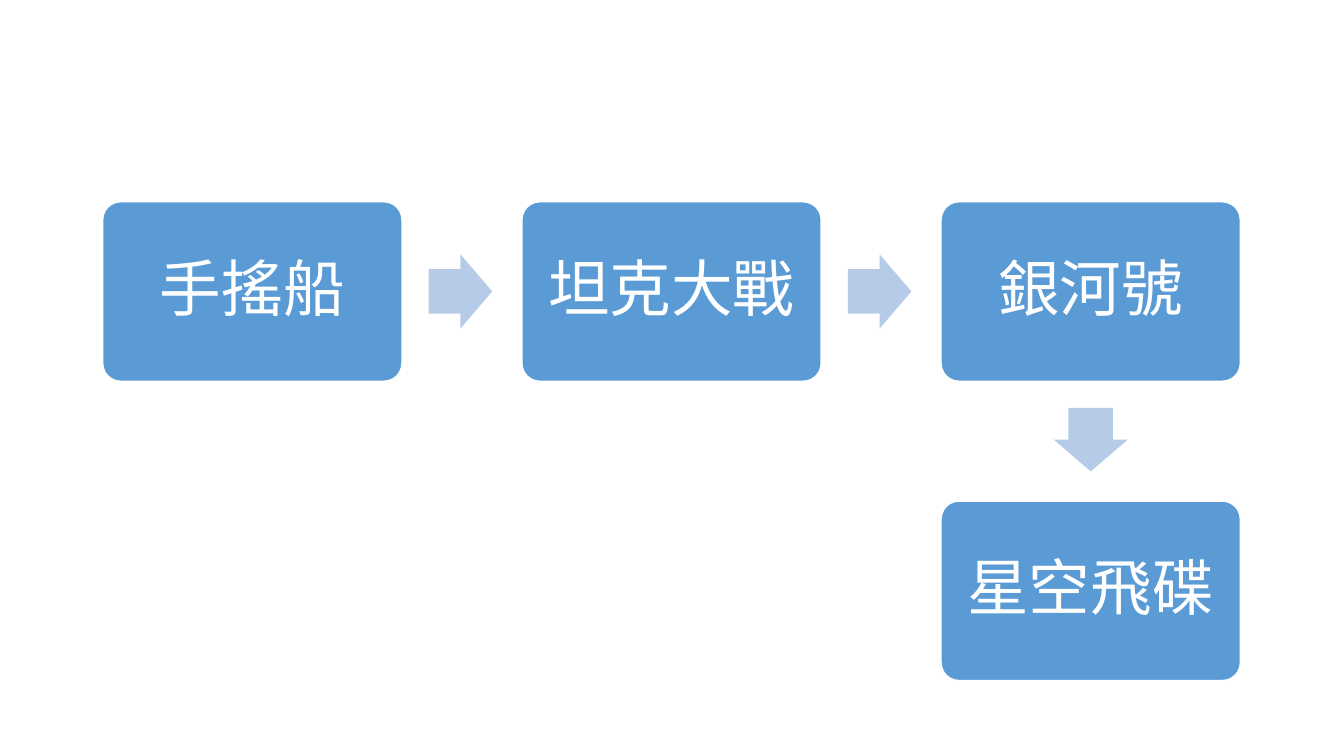
from pptx import Presentation
from pptx.dml.color import RGBColor
from pptx.enum.shapes import MSO_SHAPE
from pptx.enum.text import MSO_ANCHOR, PP_ALIGN
from pptx.util import Pt

ROUNDED, ARROW = MSO_SHAPE.ROUNDED_RECTANGLE, MSO_SHAPE.RIGHT_ARROW
MIDDLE, CENTER = MSO_ANCHOR.MIDDLE, PP_ALIGN.CENTER

COLORS = {"box": "5B9BD5", "arrow": "B5CBE7", "white": "FFFFFF"}
LEFT, TOP = 73.4, 144.1
BOX_W, BOX_H = 213.8, 128.2
STEP_X, STEP_Y = 299.4, 213.8
ARROW_W, ARROW_H = 45.4, 53
ARROW_SHIFT = 1.1
STEPS = [("手搖船", 0, 0), ("坦克大戰", 1, 0), ("銀河號", 2, 0), ("星空飛碟", 2, 1)]


class FlowSlide:
    """Draws the boxes and arrows of a flow on one slide."""

    def __init__(self, slide, font="Calibri", size=44):
        self.slide, self.font, self.size = slide, font, size

    def color(self, name):
        return RGBColor.from_string(COLORS[name])

    def shape(self, kind, x, y, w, h, fill):
        s = self.slide.shapes.add_shape(kind, Pt(x), Pt(y), Pt(w), Pt(h))
        s.shadow.inherit = False
        s.fill.solid()
        s.fill.fore_color.rgb = self.color(fill)
        return s

    def box(self, text, col, row):
        s = self.shape(ROUNDED, LEFT + col * STEP_X, TOP + row * STEP_Y, BOX_W, BOX_H, "box")
        s.adjustments[0] = 0.1
        s.line.color.rgb = self.color("white")
        s.line.width = Pt(1)
        tf = s.text_frame
        tf.word_wrap = True
        tf.vertical_anchor = MIDDLE
        tf.margin_left = tf.margin_right = tf.margin_top = tf.margin_bottom = Pt(13.2)
        p = tf.paragraphs[0]
        p.text = text
        p.alignment = CENTER
        p.line_spacing = 0.9
        p.space_after = Pt(15.4)
        p.font.name = self.font
        p.font.size = Pt(self.size)
        p.font.color.rgb = self.color("white")

    def arrow(self, col, row, dx, dy):
        cx = LEFT + BOX_W / 2 + (col + dx / 2) * STEP_X - dx * ARROW_SHIFT
        cy = TOP + BOX_H / 2 + (row + dy / 2) * STEP_Y - dy * ARROW_SHIFT
        s = self.shape(ARROW, cx - ARROW_W / 2, cy - ARROW_H / 2, ARROW_W, ARROW_H, "arrow")
        s.adjustments[0], s.adjustments[1] = 0.6, 0.5
        s.line.fill.background()
        s.rotation = 90 * dy


def main():
    prs = Presentation()
    prs.slide_width, prs.slide_height = Pt(960), Pt(540)
    flow = FlowSlide(prs.slides.add_slide(prs.slide_layouts[6]))
    for step in STEPS:
        flow.box(*step)
    for (_, col, row), (_, next_col, next_row) in zip(STEPS, STEPS[1:]):
        flow.arrow(col, row, next_col - col, next_row - row)
    prs.save("out.pptx")


if __name__ == "__main__":
    main()
